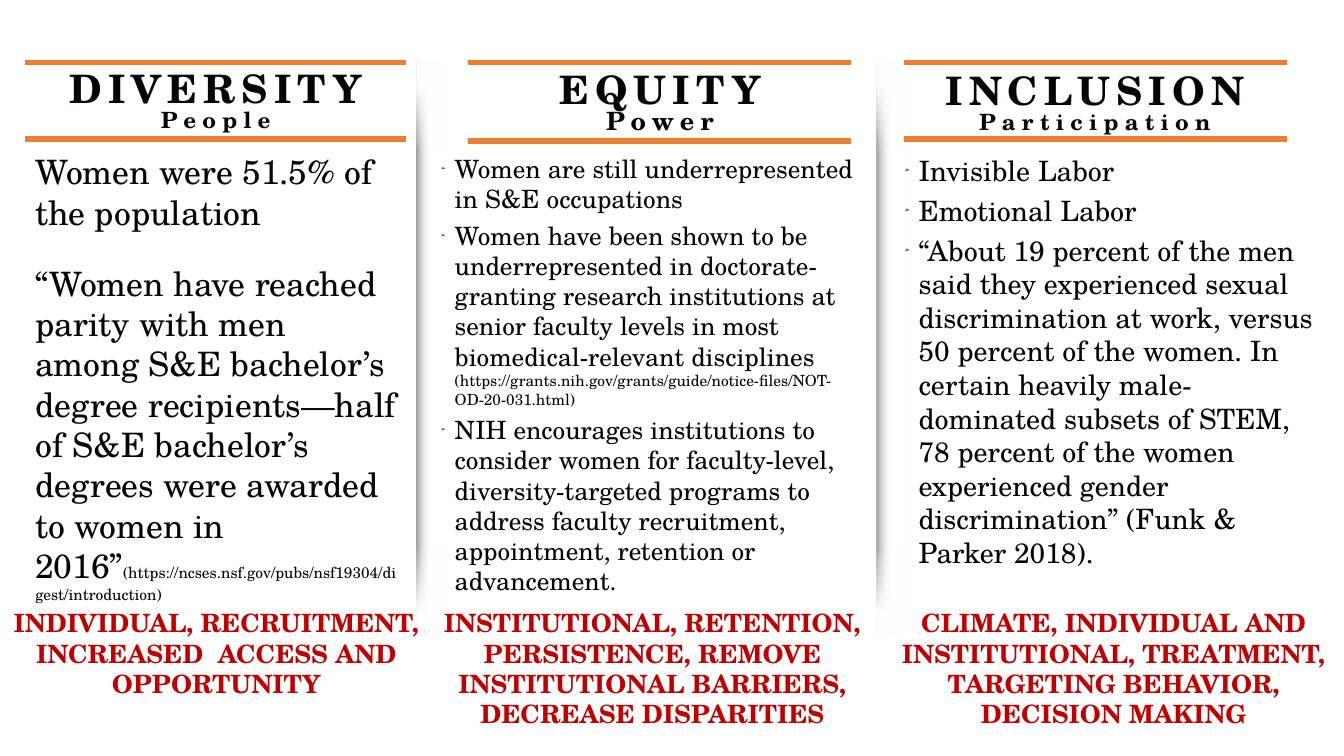
import pptx
import pptx.util
import pptx.dml.color
import pptx.enum.dml
import pptx.enum.shapes
import pptx.enum.text
import pptx.oxml
import lxml.etree
from pptx.util import Inches

ANCHOR = pptx.enum.text.MSO_ANCHOR
ALIGN = pptx.enum.text.PP_ALIGN
FIT = pptx.enum.text.MSO_AUTO_SIZE
COLORS = {"ink": "030609", "accent": "ED7D31", "theme": "C00000",
          "shade": "999999", "paper": "FFFFFF"}


def rgb(name):
    return pptx.dml.color.RGBColor.from_string(COLORS[name])


class ColumnSlide:
    """Draws styled elements on one slide."""

    font = "TeX Gyre Schola"

    def __init__(self, deck):
        self.page = deck.slides.add_slide(deck.slide_layouts[4])
        self.holders = {holder.placeholder_format.idx: holder
                        for holder in self.page.placeholders}

    def box(self, frame, holder=None, inset=(0, 0), **formats):
        frame = [Inches(length) for length in frame]
        if holder is None:
            shape = self.page.shapes.add_textbox(*frame)
        else:
            shape = self.holders[holder]
            shape.left, shape.top, shape.width, shape.height = frame
        side, edge = (Inches(length) for length in inset)
        values = {"word_wrap": True, "auto_size": FIT.NONE,
                  "vertical_anchor": ANCHOR.TOP,
                  "margin_left": side, "margin_right": side,
                  "margin_top": edge, "margin_bottom": edge} | formats
        for name, value in values.items():
            setattr(shape.text_frame, name, value)
        return shape.text_frame

    def para(self, text_frame, spans, bullet=False, tracking=0, color="ink",
             bold=False, **formats):
        para = text_frame.paragraphs[0]
        if para.runs:
            para = text_frame.add_paragraph()
        values = {"alignment": ALIGN.LEFT, "line_spacing": 1.0,
                  "space_before": pptx.util.Pt(0)} | formats
        for name, value in values.items():
            setattr(para, name, value)
        self.bullet(para, bullet)
        for text, size in spans:
            span = para.add_run()
            span.text = text
            span.font.color.rgb = rgb(color)
            for name, value in {"name": self.font, "bold": bold,
                                "size": pptx.util.Pt(size)}.items():
                setattr(span.font, name, value)
            if tracking:
                span.font._element.set("spc", str(int(tracking * 100)))

    def bullet(self, para, shown):
        properties = para._p.get_or_add_pPr()
        indent = Inches(0.14) if shown else 0
        properties.set("marL", str(indent))
        properties.set("indent", str(-indent))
        marks = [("buSzPct", {"val": "25000"}), ("buChar", {"char": "➢"})]
        for tag, values in marks if shown else [("buNone", {})]:
            lxml.etree.SubElement(properties, pptx.oxml.ns.qn("a:" + tag), values)

    def heading(self, frame, holder, title, subtitle, size):
        text_frame = self.box(frame, holder, (0.1, 0.05), vertical_anchor=ANCHOR.MIDDLE,
                              auto_size=FIT.SHAPE_TO_FIT_TEXT)
        for span in ((title, 28), (subtitle, size)):
            self.para(text_frame, [span], tracking=4.5, bold=True,
                      alignment=ALIGN.CENTER, line_spacing=0.8)

    def body(self, frame, holder, paragraphs, bullet=True, gaps=(4.5, 4.5)):
        text_frame = self.box(frame, holder)
        for index, spans in enumerate(paragraphs):
            self.para(text_frame, spans, bullet,
                      space_before=pptx.util.Pt(gaps[min(index, 1)]))

    def theme(self, frame, text):
        text_frame = self.box(frame, inset=(0.1, 0.05), auto_size=FIT.SHAPE_TO_FIT_TEXT)
        self.para(text_frame, [(text, 18)], color="theme", bold=True,
                  alignment=ALIGN.CENTER)

    def rule(self, left, right, top):
        line = self.page.shapes.add_connector(
            pptx.enum.shapes.MSO_CONNECTOR.STRAIGHT,
            Inches(right), Inches(top), Inches(left), Inches(top))
        line.line.color.rgb = rgb("accent")
        line.line.width = pptx.util.Pt(4)
        lxml.etree.SubElement(line._element.spPr, pptx.oxml.ns.qn("a:effectLst"))

    def fade(self, frame, color, stops, angle, rotation=0):
        shape = self.page.shapes.add_shape(
            pptx.enum.shapes.MSO_SHAPE.RECTANGLE, *[Inches(length) for length in frame])
        shape.shadow.inherit = False
        shape.line.fill.background()
        shape.rotation = rotation
        shape.fill.gradient()
        shape.fill.gradient_angle = angle
        for stop, place, name in zip(shape.fill.gradient_stops, stops, (color, "paper")):
            stop.position = place
            stop.color.rgb = rgb(name)
        clear = shape._element.spPr.xpath(".//a:gs/a:srgbClr")[-1]
        lxml.etree.SubElement(clear, pptx.oxml.ns.qn("a:alpha"), val="0")

    def divider(self, left, top, width, height):
        half = height / 2 + 0.03
        self.fade((left, top, width, height), "shade", (0, 0.55), 0)
        for start, rotation in ((top, 0), (top + height - half, 180)):
            self.fade((left, start, width, half), "paper", (0.08, 0.31), 270, rotation)


def main():
    deck = pptx.Presentation()
    deck.slide_width, deck.slide_height = Inches(13.33), Inches(7.5)
    slide = ColumnSlide(deck)

    slide.divider(4.13, 0.6, 0.26, 5.71)
    slide.divider(8.69, 0.62, 0.28, 5.69)
    for left, right, bottom in ((0.25, 4.03, 1.38), (4.64, 8.44, 1.4), (8.97, 12.76, 1.38)):
        for top in (0.62, bottom):
            slide.rule(left, right, top)

    slide.heading((0.25, 0.68, 3.78, 0.69), 0, "DIVERSITY", "People", 16)
    slide.heading((4.43, 0.68, 4.23, 0.72), 1, "EQUITY", "Power", 18)
    slide.heading((8.97, 0.7, 3.78, 0.69), 3, "INCLUSION", "Participation", 16)

    slide.body((0.35, 1.5, 3.59, 4.5), None, [
        [("Women were 51.5% of the population", 24)],
        [("“Women have reached parity with men among S&E bachelor’s degree "
          "recipients—half of S&E bachelor’s degrees were awarded to women in 2016”", 24),
         ("(https://ncses.nsf.gov/pubs/nsf19304/digest/introduction)", 11)],
    ], bullet=False, gaps=(4.5, 22))
    slide.body((4.37, 1.52, 4.23, 4.4), 2, [
        [("Women are still underrepresented in S&E occupations", 18)],
        [("Women have been shown to be underrepresented in doctorate-granting research "
          "institutions at senior faculty levels in most biomedical-relevant disciplines ", 18),
         ("(https://grants.nih.gov/grants/guide/notice-files/NOT-OD-20-031.html)", 11)],
        [("NIH encourages institutions to consider women for faculty-level, "
          "diversity-targeted programs to address faculty recruitment, appointment, "
          "retention or advancement.", 18)],
    ])
    slide.body((8.97, 1.52, 4.21, 4.4), 4, [
        [("Invisible Labor", 20)],
        [("Emotional Labor", 20)],
        [("“About 19 percent of the men said they experienced sexual discrimination at "
          "work, versus 50 percent of the women. In certain heavily male-dominated "
          "subsets of STEM, 78 percent of the women experienced gender discrimination” "
          "(Funk & Parker 2018).", 20)],
    ])

    slide.theme((-0.05, 5.98, 4.39, 1.01),
                "INDIVIDUAL, RECRUITMENT, INCREASED  ACCESS AND OPPORTUNITY")
    slide.theme((4.16, 5.98, 4.62, 1.31),
                "INSTITUTIONAL, RETENTION, PERSISTENCE, REMOVE INSTITUTIONAL BARRIERS, "
                "DECREASE DISPARITIES")
    slide.theme((8.77, 5.98, 4.55, 1.31),
                "CLIMATE, INDIVIDUAL AND INSTITUTIONAL, TREATMENT, TARGETING BEHAVIOR, "
                "DECISION MAKING")
    deck.save("out.pptx")


if __name__ == "__main__":
    main()
